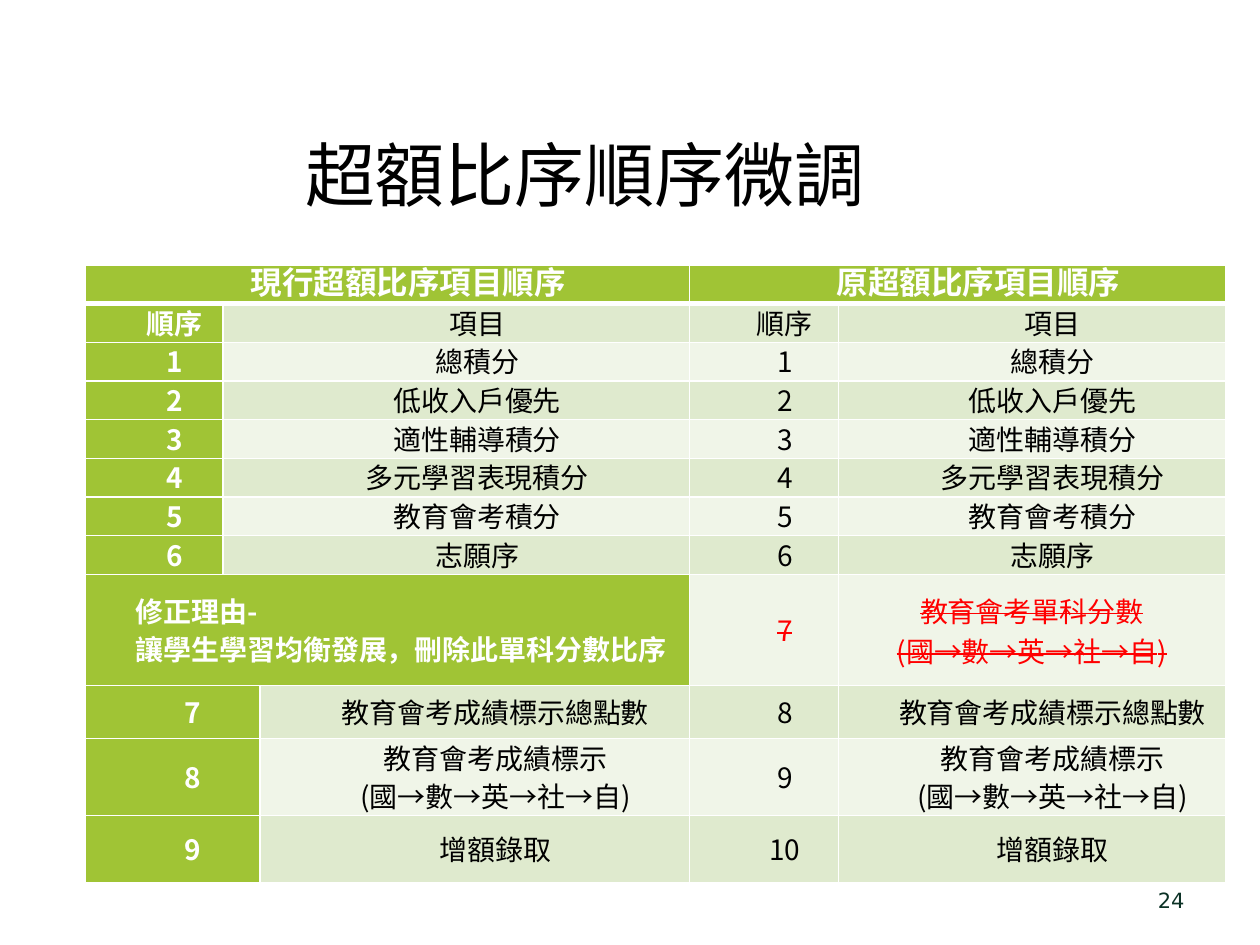
import copy

import pptx
import pptx.dml.color
import pptx.enum.text
import pptx.oxml
import pptx.oxml.ns
import pptx.util
from pptx.util import Cm

RGBColor = pptx.dml.color.RGBColor
ALIGN = pptx.enum.text.PP_ALIGN
ANCHOR = pptx.enum.text.MSO_ANCHOR
qn = pptx.oxml.ns.qn

WHITE = RGBColor(0xFF, 0xFF, 0xFF)
BLACK = RGBColor(0, 0, 0)
RED = RGBColor(0xFF, 0, 0)
GREEN = RGBColor(0xA0, 0xC4, 0x35)
PALE = RGBColor(0xDF, 0xEA, 0xCE)
PALER = RGBColor(0xF0, 0xF5, 0xE8)
DARK = RGBColor(0x0C, 0x32, 0x26)

CJK = "Noto Sans CJK SC"
HEADING = {"size": 18, "color": WHITE, "bold": True}
LABEL = {"size": 16, "color": WHITE, "bold": True}
BODY = {"size": 16, "color": BLACK, "bold": False}
DELETED = {"size": 16, "color": RED, "bold": False, "strike": True}

COLUMNS = [2.79, 0.74, 8.66, 3, 7.8]
ROWS = [0.78] * 8 + [2.24, 1.07, 1.55, 1.35]
SUBJECTS = "(國→數→英→社→自)"
SHARED_ITEMS = ["總積分", "低收入戶優先", "適性輔導積分", "多元學習表現積分", "教育會考積分", "志願序"]
LATER_ITEMS = ["教育會考成績標示總點數", "教育會考成績標示\n" + SUBJECTS, "增額錄取"]


def write(paragraph, text, size, color, bold=False, strike=False, font=CJK):
    paragraph.text = text
    for run in paragraph.runs:
        formats = {"size": pptx.util.Pt(size), "bold": bold, "name": font}
        for key, value in formats.items():
            setattr(run.font, key, value)
        run.font.color.rgb = color
        properties = run._r.get_or_add_rPr()
        properties.append(pptx.oxml.parse_xml(
            f'<a:ea {pptx.oxml.ns.nsdecls("a")} typeface="{font}"/>'))
        if strike:
            properties.set("strike", "sngStrike")
    for line_break in paragraph._p.findall(qn("a:br")):
        line_break.append(copy.deepcopy(paragraph.runs[0]._r.rPr))


def add_text(slide, left, top, width, height, text, align, anchor, **style):
    frame = slide.shapes.add_textbox(Cm(left), Cm(top), Cm(width), Cm(height)).text_frame
    frame.word_wrap = True
    frame.vertical_anchor = anchor
    frame.paragraphs[0].alignment = align
    write(frame.paragraphs[0], text, **style)


def set_borders(cell, top, bottom):
    properties = cell._tc.get_or_add_tcPr()
    widths = {"lnL": 1, "lnR": 1, "lnT": top, "lnB": bottom}
    for position, (side, width) in enumerate(widths.items()):
        properties.insert(position, pptx.oxml.parse_xml(
            f'<a:{side} {pptx.oxml.ns.nsdecls("a")} w="{pptx.util.Pt(width)}">'
            f'<a:solidFill><a:srgbClr val="{WHITE}"/></a:solidFill></a:{side}>'))


def fill_cell(cell, text, style, fill, anchor=ANCHOR.MIDDLE, align=ALIGN.CENTER, indented=True):
    formats = {"margin_left": Cm(0.19), "margin_right": Cm(0.19), "margin_top": 0,
               "margin_bottom": 0, "vertical_anchor": anchor}
    for key, value in formats.items():
        setattr(cell, key, value)
    cell.fill.solid()
    cell.fill.fore_color.rgb = fill
    paragraph = cell.text_frame.paragraphs[0]
    paragraph.alignment = align
    if indented:
        paragraph.line_spacing = pptx.util.Pt(22)
        paragraph._p.get_or_add_pPr().set("marL", str(Cm(0.84)))
    write(paragraph, text, **style)


def add_order_table(slide, left, top):
    table = slide.shapes.add_table(len(ROWS), len(COLUMNS), Cm(left), Cm(top),
                                   Cm(sum(COLUMNS)), Cm(sum(ROWS))).table
    for column, width in zip(table.columns, COLUMNS):
        column.width = Cm(width)
    for row, height in zip(table.rows, ROWS):
        row.height = Cm(height)
    for row in range(len(ROWS)):
        for column in range(len(COLUMNS)):
            set_borders(table.cell(row, column), 3 if row == 1 else 1, 3 if row == 0 else 1)

    def merged(row, first, last):
        table.cell(row, first).merge(table.cell(row, last))
        return table.cell(row, first)

    def band(row):
        return PALE if row % 2 else PALER

    fill_cell(merged(0, 0, 2), "現行超額比序項目順序", HEADING, GREEN)
    fill_cell(merged(0, 3, 4), "原超額比序項目順序", HEADING, GREEN)

    entries = [("順序", "項目")] + [(str(n), item) for n, item in enumerate(SHARED_ITEMS, 1)]
    for row, (order, item) in enumerate(entries, 1):
        anchor = ANCHOR.TOP if row == 1 else ANCHOR.MIDDLE
        fill_cell(table.cell(row, 0), order, LABEL, GREEN, anchor)
        fill_cell(merged(row, 1, 2), item, BODY, band(row), ANCHOR.TOP)
        fill_cell(table.cell(row, 3), order, BODY, band(row), anchor)
        fill_cell(table.cell(row, 4), item, BODY, band(row), ANCHOR.TOP)

    fill_cell(merged(8, 0, 2), "修正理由-\n讓學生學習均衡發展，刪除此單科分數比序",
              LABEL, GREEN, align=ALIGN.LEFT)
    fill_cell(table.cell(8, 3), "7", DELETED, band(8))
    fill_cell(table.cell(8, 4), "教育會考單科分數\n" + SUBJECTS, DELETED, band(8), indented=False)

    for row, item in enumerate(LATER_ITEMS, 9):
        anchor = ANCHOR.TOP if "\n" in item else ANCHOR.MIDDLE
        fill_cell(merged(row, 0, 1), str(row - 2), LABEL, GREEN)
        fill_cell(table.cell(row, 2), item, BODY, band(row), anchor)
        fill_cell(table.cell(row, 3), str(row - 1), BODY, band(row))
        fill_cell(table.cell(row, 4), item, BODY, band(row), anchor)


def main():
    presentation = pptx.Presentation()
    presentation.slide_width = Cm(25.4)
    presentation.slide_height = Cm(19.05)
    slide = presentation.slides.add_slide(presentation.slide_layouts[6])
    add_order_table(slide, 1.71, 5.34)
    add_text(slide, 18.2, 17.65, 5.93, 1.01, "24", ALIGN.RIGHT, ANCHOR.MIDDLE,
             size=12, color=DARK, font="DejaVu Sans")
    add_text(slide, 5.9, 2.52, 13.2, 1.97, "超額比序順序微調", ALIGN.LEFT, ANCHOR.TOP,
             size=40, color=BLACK)
    presentation.save("out.pptx")


if __name__ == "__main__":
    main()
